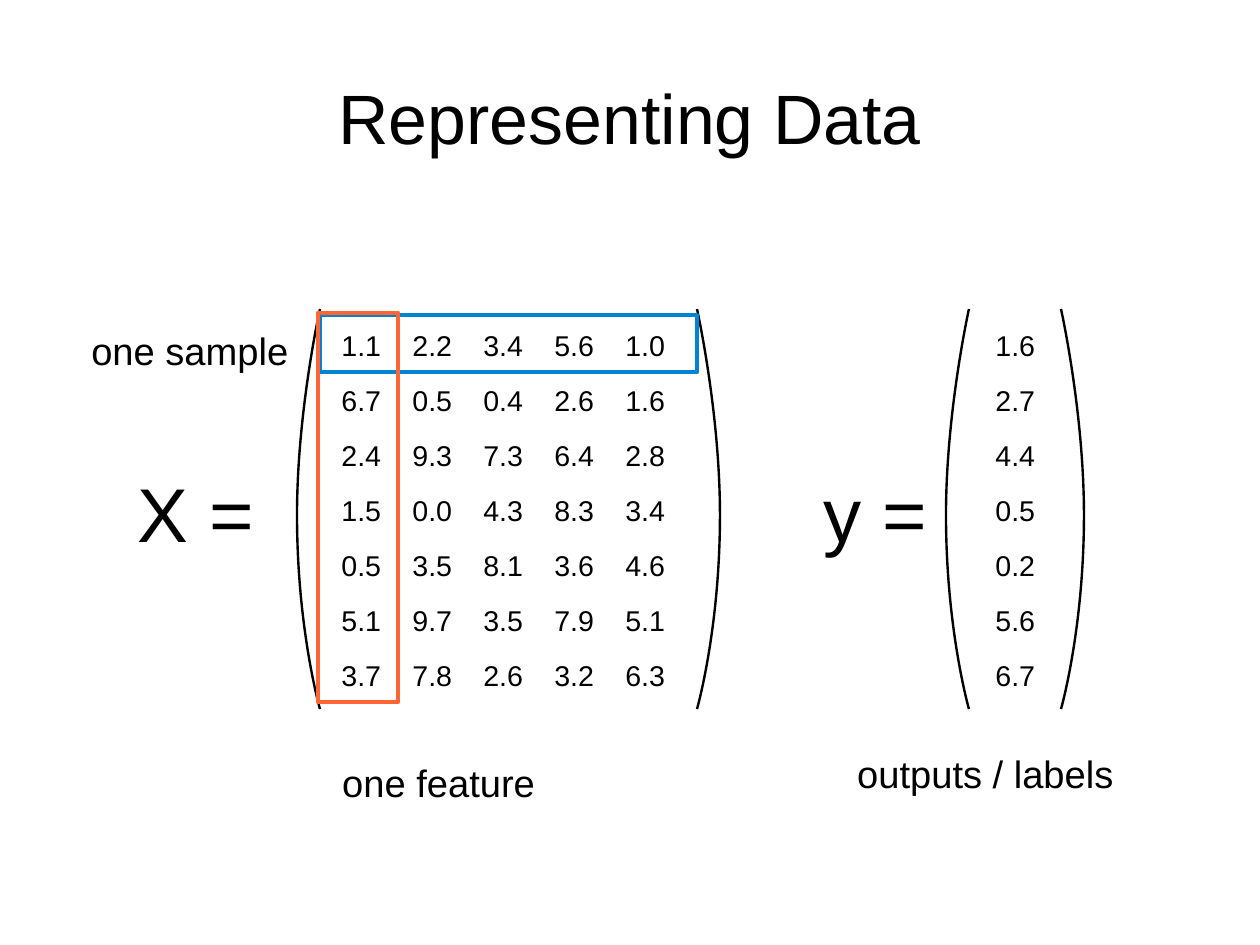
"""Build the slide that shows a feature matrix X beside its label vector y."""
from lxml.etree import SubElement
from pptx import Presentation
from pptx.dml.color import RGBColor
from pptx.enum.shapes import MSO_SHAPE as Preset
from pptx.enum.text import MSO_ANCHOR as Anchor, MSO_AUTO_SIZE as AutoSize, PP_ALIGN as Align
from pptx.oxml.ns import qn
from pptx.util import Pt

PX = 8000
COLORS = {"ink": "000000", "paper": "FFFFFF", "sample": "0084D1", "feature": "FF6633"}


def color(name):
    return RGBColor.from_string(COLORS[name])


def write(frame, text, size=18, align=Align.LEFT, anchor=Anchor.TOP):
    frame.text = text
    frame.word_wrap = True
    frame.vertical_anchor = anchor
    paragraph = frame.paragraphs[0]
    paragraph.alignment = align
    font = paragraph.runs[0].font
    font.name, font.size = "Arial", Pt(size)
    font.color.rgb = color("ink")


deck = Presentation()
deck.slide_width, deck.slide_height = 1260 * PX, 945 * PX
slide = deck.slides.add_slide(deck.slide_layouts[5])
shapes = slide.shapes

title = shapes.title
title.left, title.top, title.width, title.height = 63 * PX, 38 * PX, 1134 * PX, 158 * PX
heading = title.text_frame
heading.auto_size = AutoSize.NONE
heading.margin_left = heading.margin_right = heading.margin_top = heading.margin_bottom = 0
write(heading, "Representing Data", size=44, align=Align.CENTER, anchor=Anchor.MIDDLE)

BRACKET_TOP, BRACKET_MIDDLE, BRACKET_HEIGHT = 309, 206, 400
for tip, bulge in [(320, 297), (969, 946), (1061, 1084), (697, 720)]:
    outline = shapes.build_freeform(tip, BRACKET_TOP, scale=PX)
    outline.add_line_segments(
        [(bulge, BRACKET_TOP + BRACKET_MIDDLE), (tip, BRACKET_TOP + BRACKET_HEIGHT)], close=False
    )
    bracket = outline.convert_to_shape()
    bracket.shadow.inherit = False
    bracket.fill.background()
    bracket.line.color.rgb = color("ink")
    bracket.line.width = Pt(1.5)
    left = min(tip, bulge)
    upper_controls = [(tip - left, 0), (bulge - left, 103)]
    lower_controls = [(bulge - left, 320), (tip - left, BRACKET_HEIGHT)]
    segments = list(bracket._element.iter(qn("a:lnTo")))
    for segment, controls in zip(segments, [upper_controls, lower_controls]):
        segment.tag = qn("a:cubicBezTo")
        for index, (x, y) in enumerate(controls):
            control = SubElement(segment, qn("a:pt"), x=str(x), y=str(y))
            segment.insert(index, control)

COLUMN_WIDTH, ROW_HEIGHT, TABLE_TOP = 71, 55, 325
features = [
    ["1.1", "2.2", "3.4", "5.6", "1.0"],
    ["6.7", "0.5", "0.4", "2.6", "1.6"],
    ["2.4", "9.3", "7.3", "6.4", "2.8"],
    ["1.5", "0.0", "4.3", "8.3", "3.4"],
    ["0.5", "3.5", "8.1", "3.6", "4.6"],
    ["5.1", "9.7", "3.5", "7.9", "5.1"],
    ["3.7", "7.8", "2.6", "3.2", "6.3"],
]
labels = [["1.6"], ["2.7"], ["4.4"], ["0.5"], ["0.2"], ["5.6"], ["6.7"]]
for left, values in [(330, features), (984, labels)]:
    row_count, column_count = len(values), len(values[0])
    matrix = shapes.add_table(
        row_count, column_count, left * PX, TABLE_TOP * PX,
        column_count * COLUMN_WIDTH * PX, row_count * ROW_HEIGHT * PX,
    ).table
    matrix.first_row = matrix.horz_banding = False
    for row, numbers in enumerate(values):
        for column, number in enumerate(numbers):
            cell = matrix.cell(row, column)
            write(cell.text_frame, number)
            properties = cell._tc.get_or_add_tcPr()
            for side in ("a:lnL", "a:lnR", "a:lnT", "a:lnB"):
                border = SubElement(properties, qn(side), w=str(Pt(0.75)))
                border_fill = SubElement(border, qn("a:solidFill"))
                SubElement(border_fill, qn("a:srgbClr"), val=COLORS["paper"])
            cell.fill.solid()
            cell.fill.fore_color.rgb = color("paper")

for caption, size, left, top, width, height in [
    ("X =", 48, 126, 461, 160, 97),
    ("y =", 48, 812, 461, 147, 97),
    ("one sample", 24, 80, 322, 229, 54),
    ("one feature", 24, 331, 754, 343, 54),
    ("outputs / labels", 24, 846, 745, 400, 54),
]:
    box = shapes.add_textbox(left * PX, top * PX, width * PX, height * PX)
    write(box.text_frame, caption, size=size)

for meaning, left, top, width, height in [
    ("sample", 320, 315, 377, 57),
    ("feature", 318, 313, 80, 389),
]:
    highlight = shapes.add_shape(Preset.RECTANGLE, left * PX, top * PX, width * PX, height * PX)
    highlight.shadow.inherit = False
    highlight.fill.background()
    highlight.line.color.rgb = color(meaning)
    highlight.line.width = Pt(2.89)

deck.save("out.pptx")
